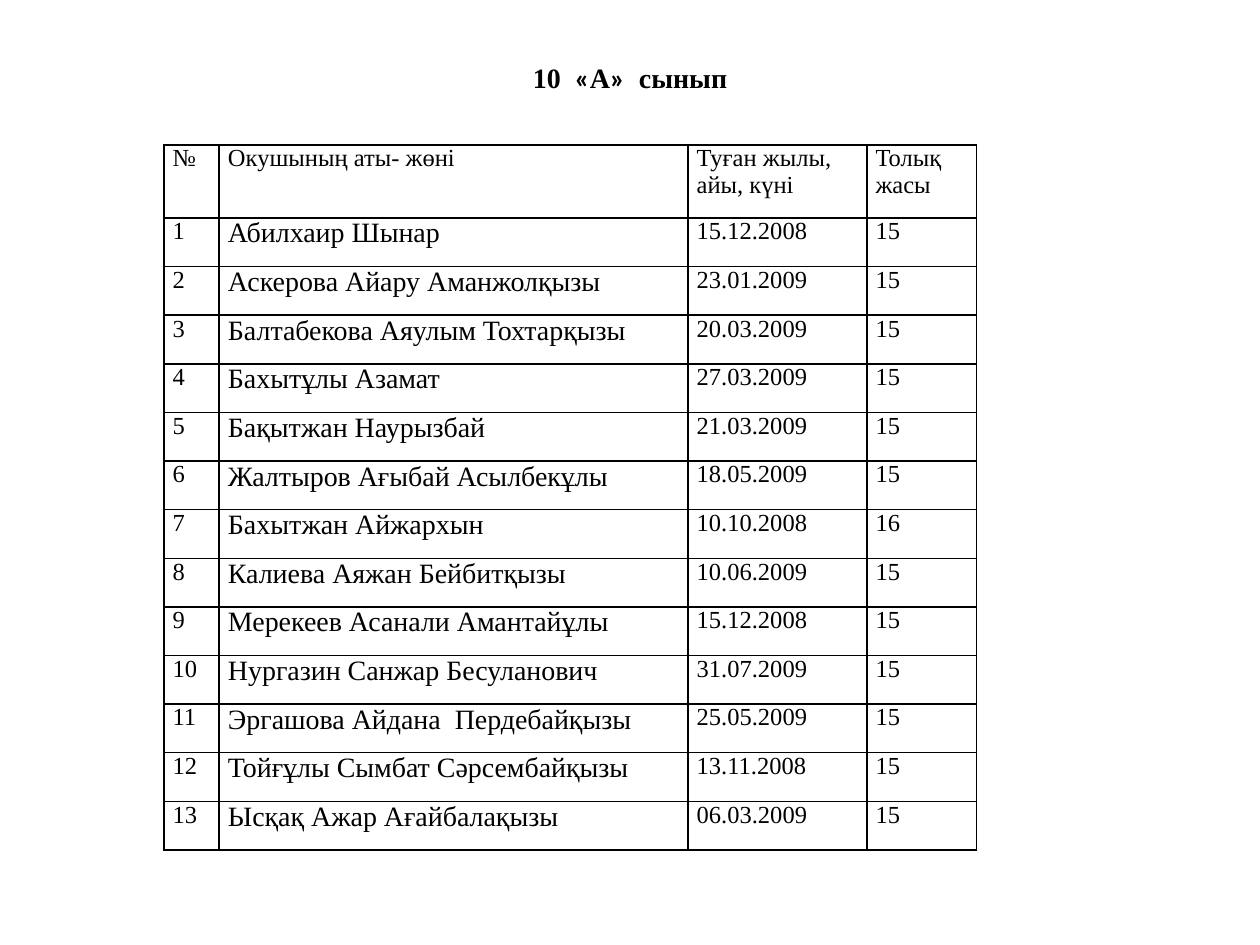
from lxml.etree import SubElement
from pptx import Presentation
from pptx.dml.color import RGBColor as RGB
from pptx.enum.text import MSO_ANCHOR as Anchor, MSO_AUTO_SIZE as AutoSize, PP_ALIGN as Align
from pptx.oxml.ns import qn
from pptx.util import Inches, Pt

TITLE = [("10  ", "main"), ("«", "quote"), ("А", "main"), ("»", "quote"), ("  сынып", "main")]
HEADER = ("№", "Окушының аты- жөні", "Туған жылы, айы, күні", "Толық жасы")
PUPILS = [
    ("Абилхаир Шынар", "15.12.2008", 15),
    ("Аскерова Айару Аманжолқызы", "23.01.2009", 15),
    ("Балтабекова Аяулым Тохтарқызы", "20.03.2009", 15),
    ("Бахытұлы Азамат", "27.03.2009", 15),
    ("Бақытжан Наурызбай", "21.03.2009", 15),
    ("Жалтыров Ағыбай Асылбекұлы", "18.05.2009", 15),
    ("Бахытжан Айжархын", "10.10.2008", 16),
    ("Калиева Аяжан Бейбитқызы", "10.06.2009", 15),
    ("Мерекеев Асанали Амантайұлы", "15.12.2008", 15),
    ("Нургазин Санжар Бесуланович", "31.07.2009", 15),
    ("Эргашова Айдана  Пердебайқызы", "25.05.2009", 15),
    ("Тойғұлы Сымбат Сәрсембайқызы", "13.11.2008", 15),
    ("Ысқақ Ажар Ағайбалақызы", "06.03.2009", 15),
]
THEME = {
    "main": "Times New Roman", "quote": "Calibri", "ink": "000000",
    "title": 16, "name": 16, "cell": 14, "border": 1,
}
W, H = 10, 7.5
LEFT, TOP = 0.13 * W, 1.15
COLS = (0.44, 3.72, 1.42, 0.87)
HEAD_H, ROW_H = 0.58, 0.386
TITLE_W, TITLE_H, TITLE_TOP = 1.76, 0.37, 0.43
NAME_COL = 1
CELL_FORMAT = {
    "margin_left": Inches(0.07), "margin_right": Inches(0.07),
    "margin_top": 0, "margin_bottom": 0, "vertical_anchor": Anchor.TOP,
}


def apply(obj, values):
    for key, value in values.items():
        setattr(obj, key, value)


def add_run(p, text, size, font="main", bold=False):
    r = p.add_run()
    r.text = text
    apply(r.font, {"name": THEME[font], "size": Pt(size), "bold": bold})
    r.font.color.rgb = RGB.from_string(THEME["ink"])


def add_borders(cell):
    tcPr = cell._tc.get_or_add_tcPr()
    for i, side in enumerate(("lnL", "lnR", "lnT", "lnB")):
        ln = tcPr.makeelement(qn(f"a:{side}"), {"w": str(Pt(THEME["border"]))})
        tcPr.insert(i, ln)
        fill = SubElement(ln, qn("a:solidFill"))
        SubElement(fill, qn("a:srgbClr"), val=THEME["ink"])


def add_title(s):
    box = s.shapes.add_textbox(*map(Inches, ((W - TITLE_W) / 2, TITLE_TOP, TITLE_W, TITLE_H)))
    tf = box.text_frame
    apply(tf, {"word_wrap": False, "vertical_anchor": Anchor.MIDDLE,
               "auto_size": AutoSize.SHAPE_TO_FIT_TEXT})
    p = tf.paragraphs[0]
    p.alignment = Align.CENTER
    for text, font in TITLE:
        add_run(p, text, THEME["title"], font, True)


def add_register(s):
    rows = [HEADER] + [(n, *pupil) for n, pupil in enumerate(PUPILS, 1)]
    heights = [HEAD_H] + [ROW_H] * len(PUPILS)
    frame = s.shapes.add_table(len(rows), len(COLS),
                               *map(Inches, (LEFT, TOP, sum(COLS), sum(heights))))
    table = frame.table
    apply(table, {"first_row": False, "horz_banding": False})
    for column, width in zip(table.columns, COLS):
        column.width = Inches(width)
    for i, (values, height) in enumerate(zip(rows, heights)):
        table.rows[i].height = Inches(height)
        for j, value in enumerate(values):
            cell = table.cell(i, j)
            apply(cell, CELL_FORMAT)
            cell.fill.background()
            add_borders(cell)
            size = THEME["name" if i and j == NAME_COL else "cell"]
            add_run(cell.text_frame.paragraphs[0], str(value), size)


def main():
    prs = Presentation()
    apply(prs, {"slide_width": Inches(W), "slide_height": Inches(H)})
    s = prs.slides.add_slide(prs.slide_layouts[6])
    add_register(s)
    add_title(s)
    prs.save("out.pptx")


if __name__ == "__main__":
    main()
